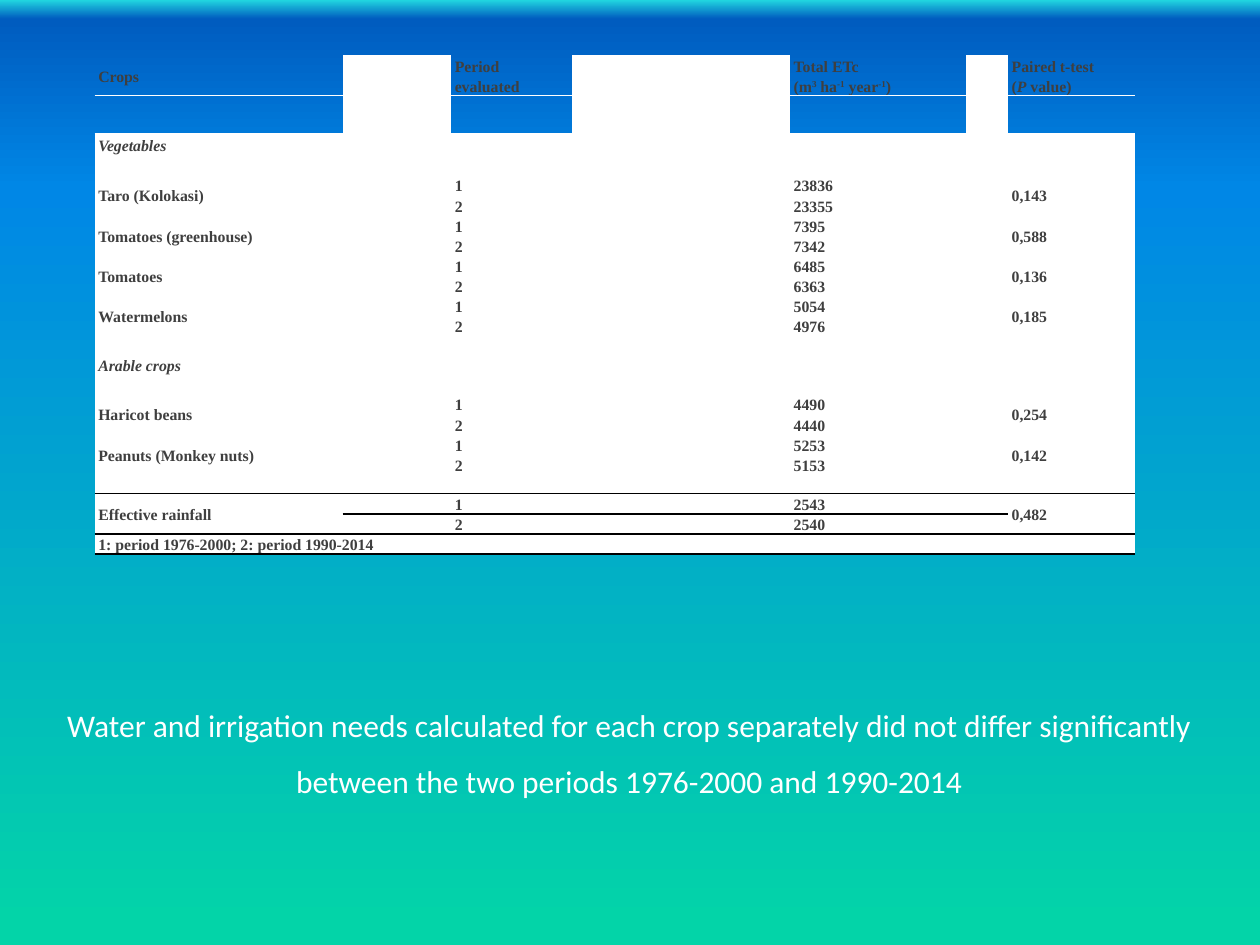
from dataclasses import dataclass

from lxml.etree import SubElement
from pptx import Presentation
from pptx.dml.color import RGBColor
from pptx.enum.text import MSO_ANCHOR, PP_ALIGN
from pptx.oxml.ns import qn
from pptx.util import Inches, Pt


@dataclass(frozen=True)
class Theme:
    table_font: str = "Times New Roman"
    body_font: str = "Calibri"
    table_size: float = 9
    empty_size: float = 6
    body_size: float = 18
    ink: str = "3F3F3F"
    white: str = "FFFFFF"
    rule: str = "000000"
    background: tuple = ((0, "21D6E0"), (2, "005CBF"), (20, "0087E6"), (98, "03D4A8"))


THEME = Theme()

# Content: a paragraph is a list of (text, style) runs
HEADER = {
    0: [[("Crops", "")]],
    2: [[("Period", "")], [("evaluated", "")]],
    5: [[("Total ETc", "")],
        [("(m", ""), ("3", "super"), (" ha", ""), ("-1", "super"),
         (" year", ""), ("-1", "super"), (")", "")]],
    7: [[("Paired t-test", "")], [("(", ""), ("P", "italic"), (" value)", "")]],
}
GROUPS = [
    ("Vegetables", [
        ("Taro (Kolokasi)", "23836", "23355", "0,143"),
        ("Tomatoes (greenhouse)", "7395", "7342", "0,588"),
        ("Tomatoes", "6485", "6363", "0,136"),
        ("Watermelons", "5054", "4976", "0,185"),
    ]),
    ("Arable crops", [
        ("Haricot beans", "4490", "4440", "0,254"),
        ("Peanuts (Monkey nuts)", "5253", "5153", "0,142"),
    ]),
]
RAINFALL = ("Effective rainfall", "2543", "2540", "0,482")
FOOTNOTE = "1: period 1976-2000; 2: period 1990-2014"
MESSAGE = ("Water and irrigation needs calculated for each crop separately did not differ "
           "significantly between the two periods 1976-2000 and 1990-2014")

COL_WIDTHS = [1.97, 0.86, 0.96, 0.33, 1.4, 1.4, 0.33, 1.01]
CROP, PERIOD, ETC, P_VALUE = 0, 2, 5, 7
ROW_COUNT, LINE_HEIGHT = 23, 0.16
SPECIAL_HEIGHTS = {0: 0.32, 1: 0.3, 2: 0.18, 3: 0.15, 12: 0.15, 14: 0.15, 19: 0.15}


def add_text(p, text, *, font, size, color, bold=None, style="", spacing=1.15, align=None):
    p.line_spacing = spacing
    p.alignment = align
    r = p.add_run()
    r.text = text
    r.font.name, r.font.size, r.font.bold = font, Pt(size), bold
    r.font.color.rgb = RGBColor.from_string(color)
    if style == "italic":
        r.font.italic = True
    elif style == "super":
        r.font._element.set("baseline", "30000")


def fill_cell(cell, paragraphs, anchor=MSO_ANCHOR.MIDDLE):
    cell.vertical_anchor = anchor
    tf = cell.text_frame
    for i, runs in enumerate(paragraphs):
        p = tf.paragraphs[0] if i == 0 else tf.add_paragraph()
        for text, style in runs:
            add_text(p, text, font=THEME.table_font, size=THEME.table_size,
                     color=THEME.ink, bold=True, style=style)


def border(cell, side, color):
    """Draw a 1 pt rule; borders come before the fill in a:tcPr."""
    tc_pr = cell._tc.get_or_add_tcPr()
    ln = SubElement(tc_pr, qn(f"a:ln{side}"), w=str(Pt(1)))
    SubElement(SubElement(ln, qn("a:solidFill")), qn("a:srgbClr"), val=color)
    tc_pr.insert(len(tc_pr.findall(qn("a:lnT"))) if side == "B" else 0, ln)


def add_crop(table, row, entry):
    name, *totals, p_value = entry
    for col, text in ((CROP, name), (P_VALUE, p_value)):
        table.cell(row, col).merge(table.cell(row + 1, col))
        fill_cell(table.cell(row, col), [[(text, "")]])
    for i, total in enumerate(totals):
        fill_cell(table.cell(row + i, PERIOD), [[(str(i + 1), "")]], MSO_ANCHOR.BOTTOM)
        fill_cell(table.cell(row + i, ETC), [[(total, "")]], MSO_ANCHOR.BOTTOM)


def add_crop_table(slide):
    heights = [SPECIAL_HEIGHTS.get(i, LINE_HEIGHT) for i in range(ROW_COUNT)]
    table = slide.shapes.add_table(
        ROW_COUNT, len(COL_WIDTHS), Inches(0.75), Inches(0.44),
        Inches(sum(COL_WIDTHS)), Inches(sum(heights))).table
    table.first_row = table.horz_banding = False
    style_id = table._tbl.tblPr.find(qn("a:tableStyleId"))
    style_id.text = "{2D5ABB26-0587-4C30-8999-92F81FD0307C}"  # no style, no grid
    for column, width in zip(table.columns, COL_WIDTHS):
        column.width = Inches(width)
    for row, height in zip(table.rows, heights):
        row.height = Inches(height)

    # Header
    for col, paragraphs in HEADER.items():
        anchor = MSO_ANCHOR.MIDDLE if col == CROP else MSO_ANCHOR.BOTTOM
        fill_cell(table.cell(0, col), paragraphs, anchor)

    # Crop groups: title, spacer, two rows per crop, spacer
    row = 2
    for title, crops in GROUPS:
        fill_cell(table.cell(row, CROP), [[(title, "italic")]])
        row += 2
        for crop in crops:
            add_crop(table, row, crop)
            row += 2
        row += 1

    # Rainfall and footnote
    rain_row, note_row = row, row + 2
    add_crop(table, rain_row, RAINFALL)
    table.cell(note_row, 0).merge(table.cell(note_row, 5))
    fill_cell(table.cell(note_row, 0), [[(FOOTNOTE, "")]], MSO_ANCHOR.TOP)

    # Fills, margins and rules
    rules = {("B", 0): THEME.white, ("T", 1): THEME.white}
    for edge in (rain_row, note_row, ROW_COUNT):
        rules["B", edge - 1] = rules["T", edge] = THEME.rule
    for i in range(ROW_COUNT):
        for col in range(len(COL_WIDTHS)):
            cell = table.cell(i, col)
            cell.margin_left = cell.margin_right = Inches(0.03)
            cell.margin_top = cell.margin_bottom = 0
            if i < 2 and col in HEADER:
                cell.fill.background()
            else:
                cell.fill.solid()
                cell.fill.fore_color.rgb = RGBColor.from_string(THEME.white)
            for side in "TB":
                if (side, i) in rules:
                    border(cell, side, rules[side, i])
            if not cell.text_frame.text:
                SubElement(cell.text_frame.paragraphs[0]._p, qn("a:endParaRPr"),
                           sz=str(int(THEME.empty_size * 100)))


def set_background(slide):
    fill = slide.background.fill
    fill.gradient()
    fill.gradient_angle = 270
    stops = next(slide.element.iter(qn("a:gsLst")))
    for stop in list(stops):
        stops.remove(stop)
    for position, color in THEME.background:
        stop = SubElement(stops, qn("a:gs"), pos=str(position * 1000))
        SubElement(stop, qn("a:srgbClr"), val=color)


def main():
    prs = Presentation()
    prs.slide_width, prs.slide_height = Inches(10), Inches(7.5)
    slide = prs.slides.add_slide(prs.slide_layouts[6])
    set_background(slide)
    add_crop_table(slide)

    # Conclusion
    sp = slide.shapes.add_textbox(Inches(0.35), Inches(5.4), Inches(9.29), Inches(0.95))
    tf = sp.text_frame
    tf.word_wrap = True
    add_text(tf.paragraphs[0], MESSAGE, font=THEME.body_font, size=THEME.body_size,
             color=THEME.white, spacing=1.5, align=PP_ALIGN.CENTER)
    prs.save("out.pptx")


if __name__ == "__main__":
    main()
